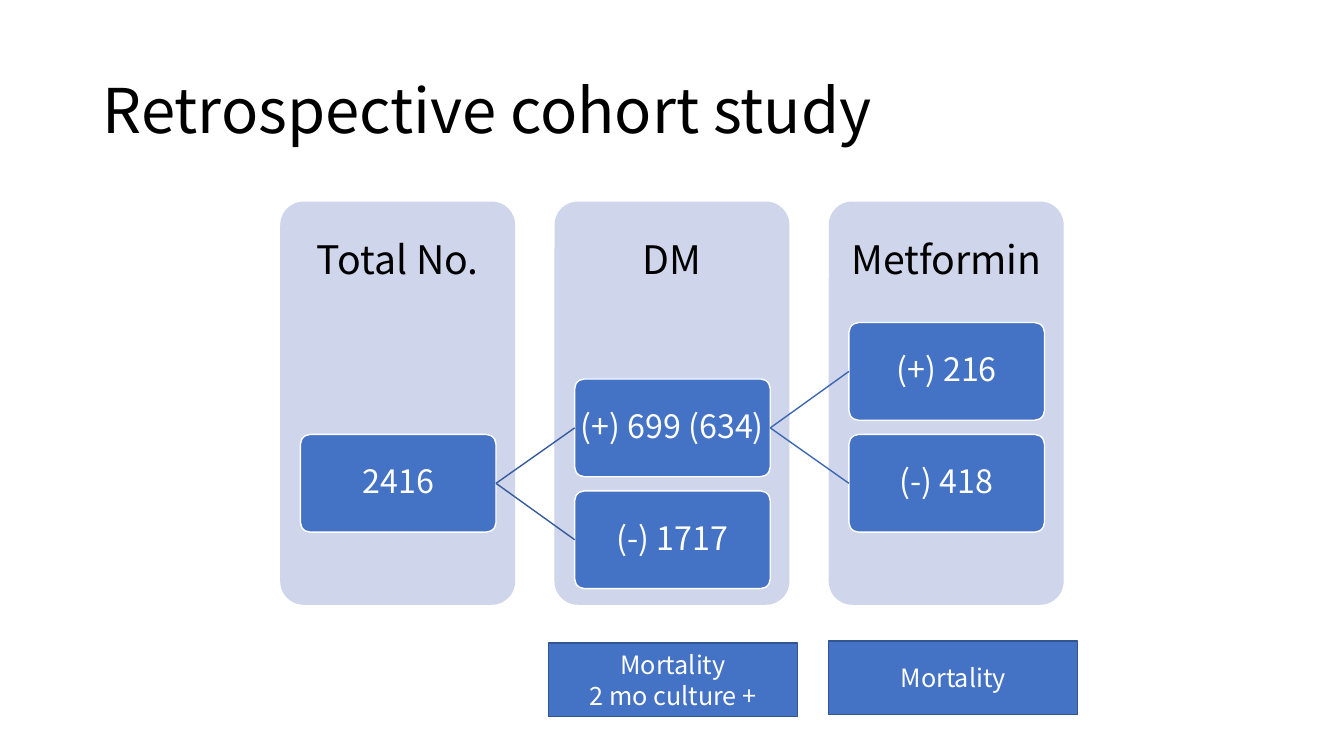
from lxml import etree
from pptx import Presentation
from pptx.dml.color import RGBColor
from pptx.enum.shapes import MSO_CONNECTOR, MSO_SHAPE
from pptx.enum.text import MSO_ANCHOR, PP_ALIGN
from pptx.oxml.ns import qn
from pptx.util import Inches, Pt

ROUNDED, RECTANGLE = MSO_SHAPE.ROUNDED_RECTANGLE, MSO_SHAPE.RECTANGLE
STRAIGHT = MSO_CONNECTOR.STRAIGHT
MIDDLE = MSO_ANCHOR.MIDDLE
LEFT, CENTER = PP_ALIGN.LEFT, PP_ALIGN.CENTER
LEFT_SIDE, RIGHT_SIDE = 1, 3

BLACK = RGBColor(0x00, 0x00, 0x00)
WHITE = RGBColor(0xFF, 0xFF, 0xFF)
PALE = RGBColor(0xCF, 0xD5, 0xEA)
BLUE = RGBColor(0x44, 0x72, 0xC4)
OUTCOME_EDGE = RGBColor(0x32, 0x54, 0x91)
FIRST_BRANCH = RGBColor(0x36, 0x5B, 0x9D)
SECOND_BRANCH = RGBColor(0x3E, 0x67, 0xB2)

COLUMN_LEFT, COLUMN_PITCH, COLUMN_WIDTH = 2.78, 2.72, 2.33
COLUMN_TOP, COLUMN_HEIGHT, HEADING_HEIGHT = 2, 4, 1.2
NODE_INDENT, NODE_WIDTH, NODE_HEIGHT = 0.2, 1.94, 0.97


class CohortSlide:
    """Draws the cohort tree on one slide in a shared style."""

    font = "Noto Sans CJK KR"

    def __init__(self, slide):
        self.shapes = slide.shapes

    def fill_text(self, shape, lines, size, color, align=CENTER, spacing=0.9, inset=0.02):
        frame = shape.text_frame
        frame.word_wrap = True
        frame.vertical_anchor = MIDDLE
        frame.margin_left = frame.margin_right = Inches(inset)
        frame.margin_top = frame.margin_bottom = Inches(inset)
        for index, line in enumerate(lines):
            paragraph = frame.add_paragraph() if index else frame.paragraphs[0]
            paragraph.text = line
            paragraph.alignment = align
            paragraph.line_spacing = spacing
            paragraph.font.name = self.font
            paragraph.font.size = Pt(size)
            paragraph.font.color.rgb = color

    def text(self, box, line, size, align=CENTER, inset=0.1):
        label = self.shapes.add_textbox(*map(Inches, box))
        self.fill_text(label, [line], size, BLACK, align, inset=inset)

    def block(self, kind, box, fill, edge=None):
        block = self.shapes.add_shape(kind, *map(Inches, box))
        block.shadow.inherit = False
        block.fill.solid()
        block.fill.fore_color.rgb = fill
        if kind == ROUNDED:
            block.adjustments[0] = 0.1
        if edge is None:
            block.line.fill.background()
        else:
            block.line.color.rgb = edge
            block.line.width = Pt(1)
        return block

    def column(self, index, heading):
        left = COLUMN_LEFT + index * COLUMN_PITCH
        self.block(ROUNDED, (left, COLUMN_TOP, COLUMN_WIDTH, COLUMN_HEIGHT), PALE)
        self.text((left, COLUMN_TOP, COLUMN_WIDTH, HEADING_HEIGHT), heading, 28, inset=0.22)

    def node(self, column, top, label):
        left = COLUMN_LEFT + column * COLUMN_PITCH + NODE_INDENT
        node = self.block(ROUNDED, (left, top, NODE_WIDTH, NODE_HEIGHT), BLUE, WHITE)
        self.fill_text(node, [label], 23, WHITE)
        return node

    def branch(self, parent, child, color):
        branch = self.shapes.add_connector(STRAIGHT, 0, 0, 0, 0)
        branch.begin_connect(parent, RIGHT_SIDE)
        branch.end_connect(child, LEFT_SIDE)
        branch.line.color.rgb = color
        branch.line.width = Pt(1)
        etree.SubElement(branch.element.spPr, qn("a:effectLst"))

    def outcome(self, left, top, lines):
        outcome = self.block(RECTANGLE, (left, top, 2.47, 0.73), BLUE, OUTCOME_EDGE)
        self.fill_text(outcome, lines, 18, WHITE, spacing=1.0, inset=0.05)


def main():
    deck = Presentation()
    deck.slide_width, deck.slide_height = Inches(13.33), Inches(7.5)
    cohort = CohortSlide(deck.slides.add_slide(deck.slide_layouts[6]))

    cohort.text((0.92, 0.4, 11.5, 1.45), "Retrospective cohort study", 44, LEFT)
    for index, heading in enumerate(("Total No.", "DM", "Metformin")):
        cohort.column(index, heading)

    total = cohort.node(0, 4.31, "2416")
    diabetic = cohort.node(1, 3.76, "(+) 699 (634)")
    non_diabetic = cohort.node(1, 4.87, "(-) 1717")
    treated = cohort.node(2, 3.2, "(+) 216")
    untreated = cohort.node(2, 4.31, "(-) 418")
    for parent, children, color in (
        (total, (diabetic, non_diabetic), FIRST_BRANCH),
        (diabetic, (treated, untreated), SECOND_BRANCH),
    ):
        for child in children:
            cohort.branch(parent, child, color)

    cohort.outcome(5.44, 6.38, ["Mortality", "2 mo culture +"])
    cohort.outcome(8.22, 6.36, ["Mortality"])
    deck.save("out.pptx")


if __name__ == "__main__":
    main()
